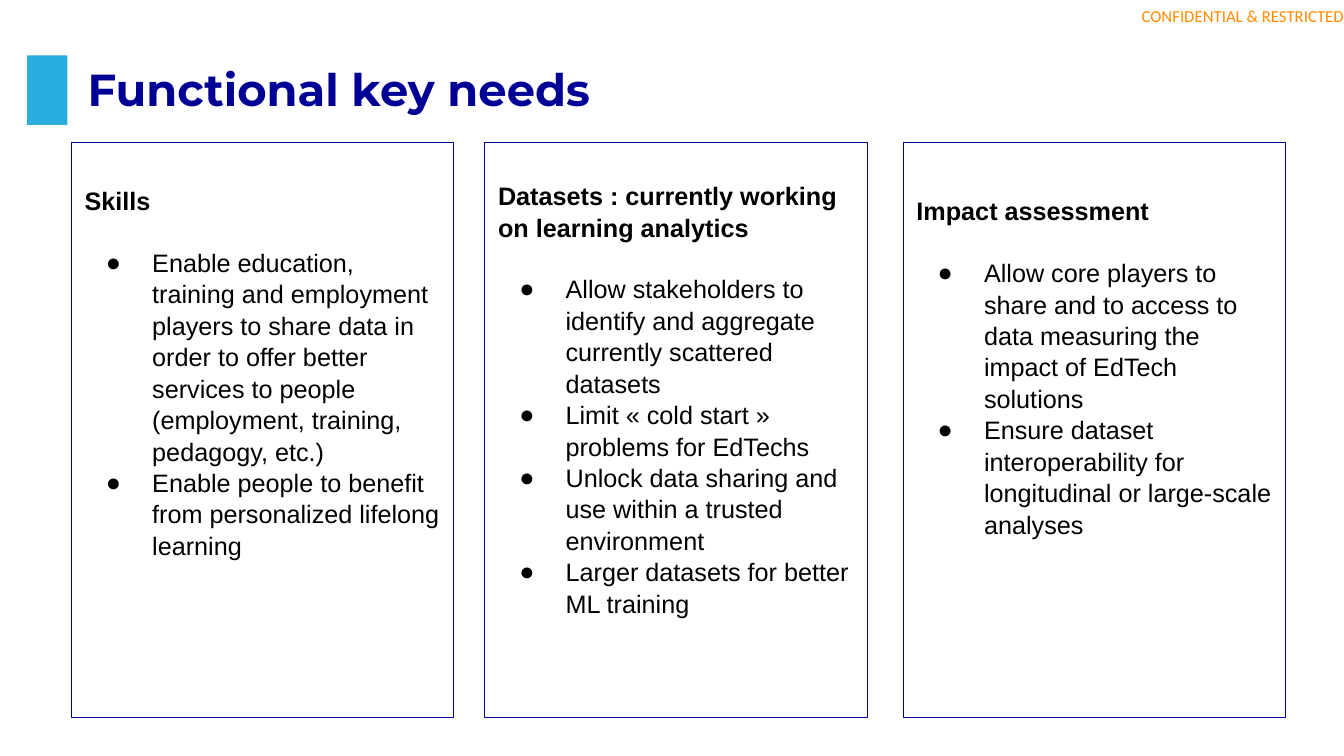
from lxml import etree
from pptx import Presentation, util as u
from pptx.dml.color import RGBColor
from pptx.enum import shapes, text
from pptx.oxml.ns import qn

WIDTH, HEIGHT = 13.33, 7.5
NAVY, SKY, ORANGE, BLACK, WHITE = "000094", "2AADDF", "FF8C00", "000000", "FFFFFF"
CARD_TOP, CARD_WIDTH, CARD_HEIGHT = 1.41, 3.79, 5.71
CARD_PADDING = 0.13
BODY = {"name": "Arial", "size": u.Pt(18)}
LINE_SPACING = 1.04

CARDS = [
    (0.71, 0.42, "Skills", [
        "Enable education, training and employment players to share data in order "
        "to offer better services to people (employment, training, pedagogy, etc.)",
        "Enable people to benefit from personalized lifelong learning",
    ]),
    (4.81, 0.37, "Datasets : currently working on learning analytics", [
        "Allow stakeholders to identify and aggregate currently scattered datasets",
        "Limit « cold start » problems for EdTechs",
        "Unlock data sharing and use within a trusted environment",
        "Larger datasets for better ML training",
    ]),
    (8.96, 0.52, "Impact assessment", [
        "Allow core players to share and to access to data measuring the impact "
        "of EdTech solutions",
        "Ensure dataset interoperability for longitudinal or large-scale analyses",
    ]),
]


def color(value):
    return RGBColor.from_string(value)


def apply_format(target, values):
    for name, value in values.items():
        setattr(target, name, value)


def set_frame(frame, anchor, left, top, right, bottom):
    apply_format(frame, {
        "word_wrap": True,
        "vertical_anchor": anchor,
        "margin_left": u.Inches(left),
        "margin_top": u.Inches(top),
        "margin_right": u.Inches(right),
        "margin_bottom": u.Inches(bottom),
    })


def write(paragraph, content, font_color, font, layout):
    apply_format(paragraph, layout)
    run = paragraph.add_run()
    run.text = content
    apply_format(run.font, font)
    run.font.color.rgb = color(font_color)


def add_bullet(paragraph):
    properties = paragraph._p.get_or_add_pPr()
    properties.set("marL", str(u.Inches(0.67)))
    properties.set("indent", str(u.Inches(-0.46)))
    bullet_color = etree.SubElement(properties, qn("a:buClr"))
    etree.SubElement(bullet_color, qn("a:srgbClr"), val=BLACK)
    etree.SubElement(properties, qn("a:buFont"), typeface="Arial")
    etree.SubElement(properties, qn("a:buChar"), char="●")


def add_label(slide, box, margin, content, font_color, font, align):
    shape = slide.shapes.add_textbox(*map(u.Inches, box))
    set_frame(shape.text_frame, text.MSO_ANCHOR.MIDDLE, *[margin] * 4)
    write(shape.text_frame.paragraphs[0], content, font_color, font, {"alignment": align})


def add_rectangle(slide, box, fill, line=None):
    shape = slide.shapes.add_shape(shapes.MSO_SHAPE.RECTANGLE, *map(u.Inches, box))
    shape.shadow.inherit = False
    shape.fill.solid()
    shape.fill.fore_color.rgb = color(fill)
    if line:
        shape.line.color.rgb = color(line)
        shape.line.width = u.Pt(0.75)
    else:
        shape.line.fill.background()
    return shape


def add_card(slide, left, text_top, heading, needs):
    card = add_rectangle(slide, (left, CARD_TOP, CARD_WIDTH, CARD_HEIGHT), WHITE, NAVY)
    frame = card.text_frame
    set_frame(frame, text.MSO_ANCHOR.TOP, CARD_PADDING, text_top, CARD_PADDING, CARD_PADDING)
    layout = {"alignment": text.PP_ALIGN.LEFT, "line_spacing": LINE_SPACING}
    write(frame.paragraphs[0], heading, BLACK, {**BODY, "bold": True},
          {**layout, "space_after": u.Pt(21.6)})
    for need in needs:
        paragraph = frame.add_paragraph()
        add_bullet(paragraph)
        write(paragraph, need, BLACK, BODY, layout)


def main():
    presentation = Presentation()
    presentation.slide_width = u.Inches(WIDTH)
    presentation.slide_height = u.Inches(HEIGHT)
    slide = presentation.slides.add_slide(presentation.slide_layouts[6])
    add_label(slide, (WIDTH - 2.39, 0, 2.39, 0.32), 0, "CONFIDENTIAL & RESTRICTED", ORANGE,
              {"name": "Calibri", "size": u.Pt(12)}, text.PP_ALIGN.RIGHT)
    add_label(slide, (0.77, 0.34, 12.04, 1.07), 0.1, "Functional key needs", NAVY,
              {"name": "Montserrat", "size": u.Pt(32), "bold": True}, text.PP_ALIGN.LEFT)
    add_rectangle(slide, (0.27, 0.55, 0.4, 0.69), SKY)
    for card in CARDS:
        add_card(slide, *card)
    presentation.save("out.pptx")


if __name__ == "__main__":
    main()
